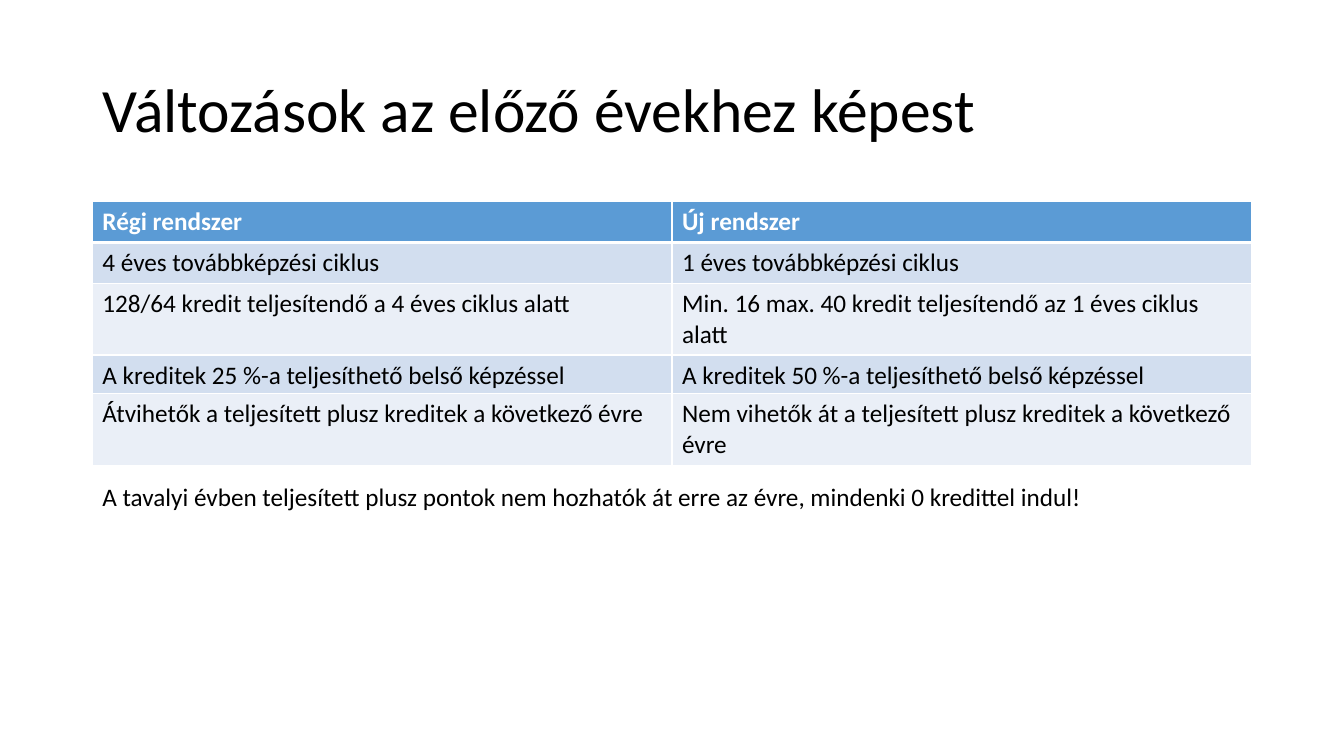
from lxml.etree import SubElement as Sub
from pptx import Presentation
from pptx.dml.color import RGBColor as Rgb
from pptx.enum.text import MSO_ANCHOR as Anchor, PP_ALIGN as Align
from pptx.oxml.ns import qn
from pptx.util import Pt

PX = 9525
LEFT, WIDE, ROW = 88, 1104, 39
HUES = {"white": "FFFFFF", "black": "000000", "head": "5B9BD5",
        "dark": "D2DEEF", "light": "EAEFF7"}

SYSTEMS = [
    ("Régi rendszer", "Új rendszer"),
    ("4 éves továbbképzési ciklus", "1 éves továbbképzési ciklus"),
    ("128/64 kredit teljesítendő a 4 éves ciklus alatt",
     "Min. 16 max. 40 kredit teljesítendő az 1 éves ciklus alatt"),
    ("A kreditek 25 %-a teljesíthető belső képzéssel",
     "A kreditek 50 %-a teljesíthető belső képzéssel"),
]
CARRY = [("Átvihetők a teljesített plusz kreditek a következő évre",
          "Nem vihetők át a teljesített plusz kreditek a következő évre")]


def write(frame, text, size=18, hue="black", bold=False):
    """Put one left-aligned paragraph into a text frame."""
    frame.word_wrap = True
    para = frame.paragraphs[0]
    para.text = text
    para.alignment = Align.LEFT
    font = para.font
    font.name, font.size, font.bold = "Calibri", Pt(size), bold
    font.color.rgb = Rgb.from_string(HUES[hue])
    return para


def edge(cell, side, width):
    """Draw one white border of a cell."""
    line = Sub(cell._tc.get_or_add_tcPr(), qn(f"a:ln{side}"), w=str(Pt(width)))
    Sub(Sub(line, qn("a:solidFill")), qn("a:srgbClr"), val=HUES["white"])


def add_grid(slide, top, rows, fills, head=False):
    """Add a table with one fill per row and an optional header row."""
    cols = len(rows[0])
    table = slide.shapes.add_table(len(rows), cols, LEFT * PX, top * PX,
                                   WIDE * PX, ROW * len(rows) * PX).table
    table.first_row, table.horz_banding = head, False
    for r, (texts, fill) in enumerate(zip(rows, fills)):
        title = head and r == 0
        for c, text in enumerate(texts):
            cell = table.cell(r, c)
            write(cell.text_frame, text, hue="white" if title else "black", bold=title)
            for side in "LRTB":
                thick = head and (r, side) in ((0, "B"), (1, "T"))
                edge(cell, side, 3 if thick else 1)
            cell.fill.solid()
            cell.fill.fore_color.rgb = Rgb.from_string(HUES[fill])


def add_title(slide, text):
    """Place and format the title placeholder."""
    title = slide.shapes.title
    title.left, title.top = LEFT * PX, 38 * PX
    title.width, title.height = WIDE * PX, 139 * PX
    title.text_frame.vertical_anchor = Anchor.MIDDLE
    write(title.text_frame, text, size=44).line_spacing = 0.9


def add_note(slide, text):
    """Add the remark below the tables."""
    box = slide.shapes.add_textbox(LEFT * PX, 454 * PX, 1056 * PX, 38 * PX)
    write(box.text_frame, text)


def main():
    """Build and save the slide."""
    deck = Presentation()
    deck.slide_width, deck.slide_height = 1280 * PX, 720 * PX
    slide = deck.slides.add_slide(deck.slide_layouts[5])
    add_title(slide, "Változások az előző évekhez képest")
    add_grid(slide, 192, SYSTEMS, ["head", "dark", "light", "dark"], head=True)
    add_grid(slide, 375, CARRY, ["light"])
    add_note(slide, "A tavalyi évben teljesített plusz pontok nem hozhatók át "
                    "erre az évre, mindenki 0 kredittel indul!")
    deck.save("out.pptx")


if __name__ == "__main__":
    main()
